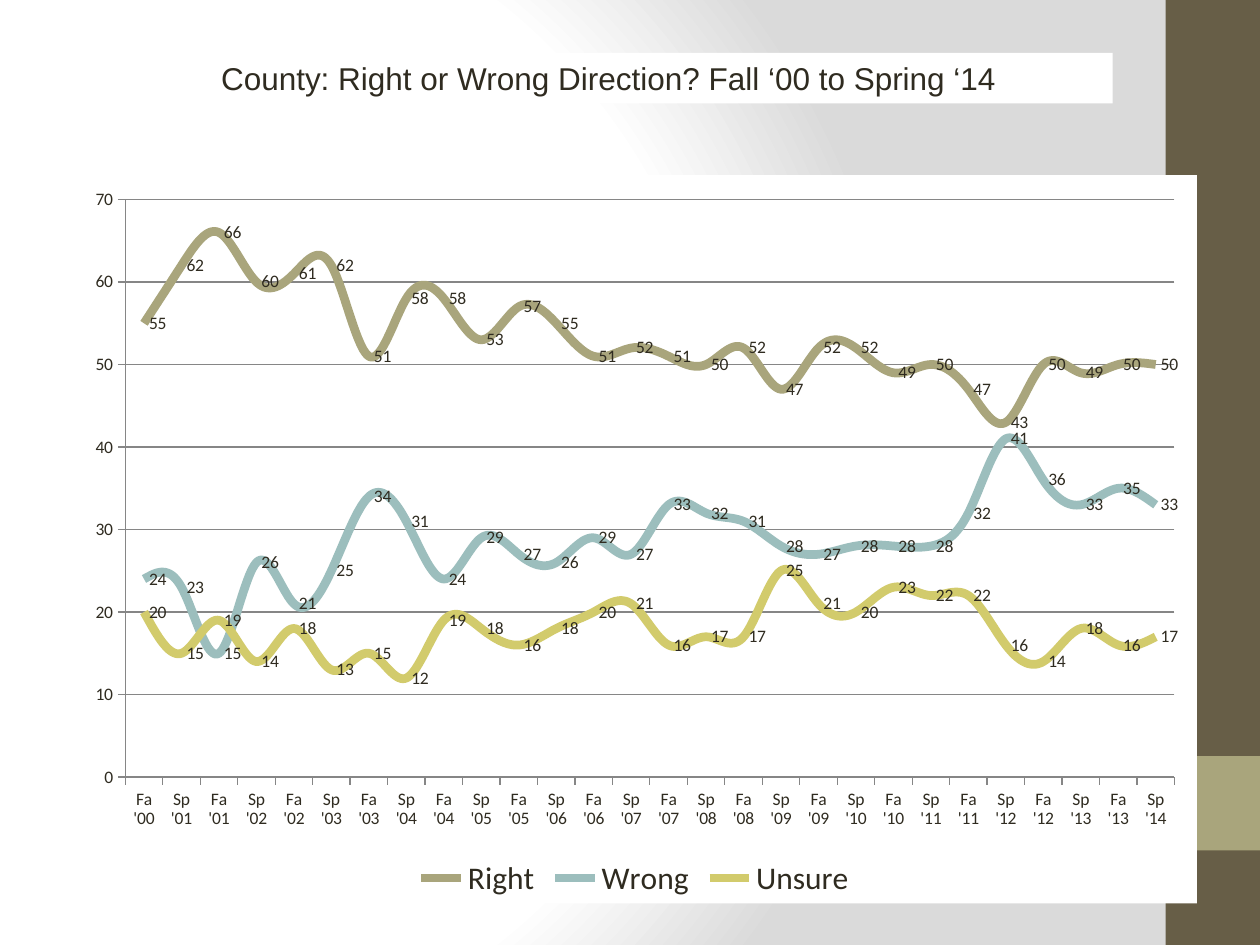
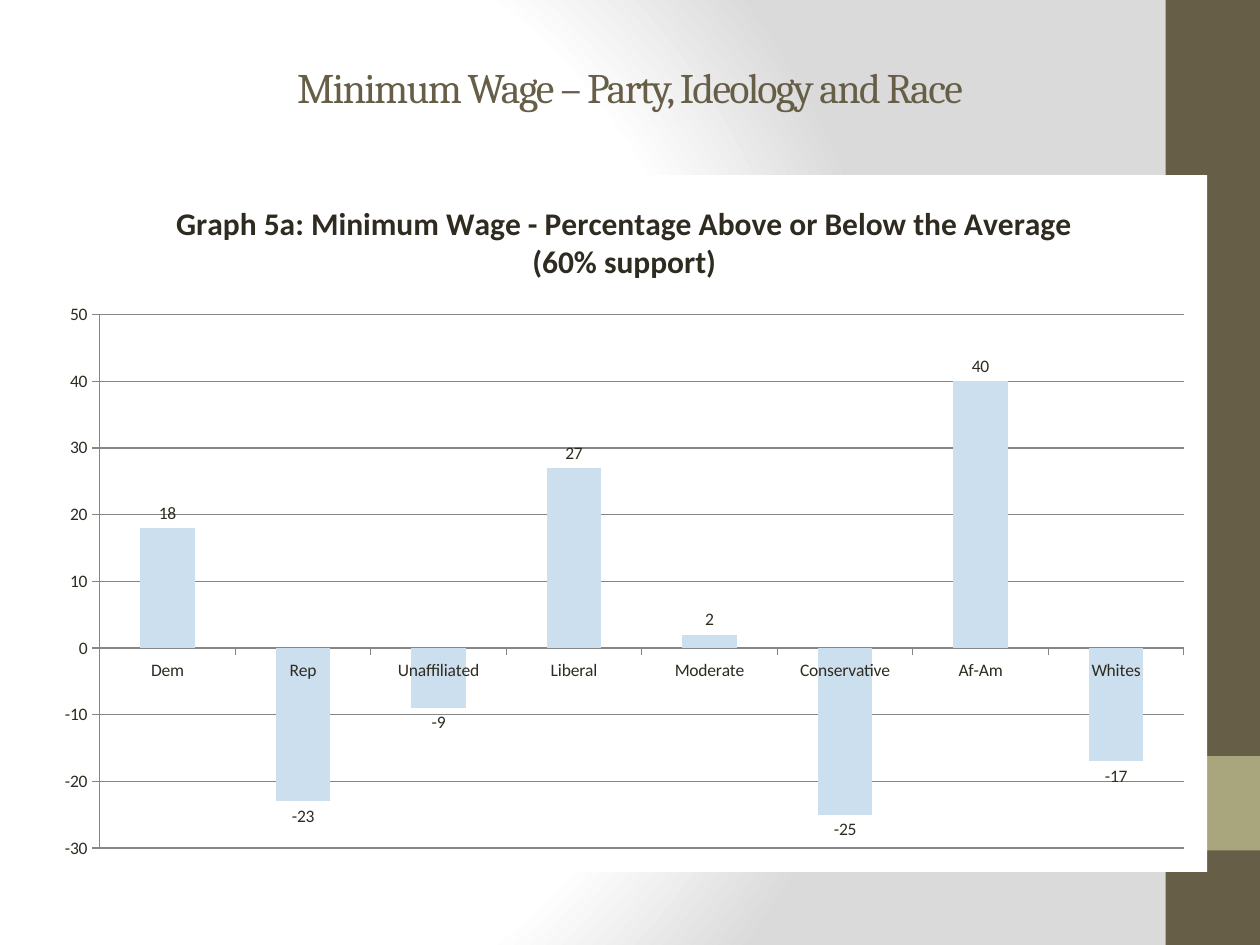
import dataclasses
import typing

import pptx
import pptx.chart.data
import pptx.dml.color
import pptx.enum.chart
import pptx.enum.shapes
import pptx.enum.text
import pptx.oxml
import pptx.oxml.ns
import pptx.util

Inches = pptx.util.Inches
Pt = pptx.util.Pt
qn = pptx.oxml.ns.qn
Kind = pptx.enum.chart.XL_CHART_TYPE
Spot = pptx.enum.chart.XL_LABEL_POSITION
Box = tuple[float, float, float, float]

COLORS = {
    "white": "FFFFFF", "fade": "DADADA", "brown": "675E47", "khaki": "A9A57C",
    "text": "2F2B20", "teal": "9CBEBD", "lime": "D2CB6C", "sky": "CCDFEE",
    "grid": "868686",
}
NS = pptx.oxml.ns.nsdecls("a", "c")


@dataclasses.dataclass
class Band:
    box: Box
    color: str


@dataclasses.dataclass
class Title:
    text: str
    box: Box
    font: str
    size: int
    color: str
    fill: typing.Optional[str] = None
    space: int = 0


@dataclasses.dataclass
class Series:
    name: str
    color: str
    vals: list[int]


@dataclasses.dataclass
class Graph:
    kind: Kind
    box: Box
    cats: list[str]
    series: list[Series]
    low: int
    high: int
    spot: Spot
    title: str = ""


BANDS = [
    Band((9.25, 0, 0.75, 7.5), "brown"),
    Band((9.25, 6, 0.75, 0.75), "khaki"),
]

# Terms run from fall 2000 to spring 2014
TERMS = ["Fa '00"] + [
    f"{term} '{year:02}" for year in range(1, 14) for term in ("Sp", "Fa")
] + ["Sp '14"]

TREND = Graph(
    Kind.LINE, (0.58, 1.39, 8.92, 5.78), TERMS,
    [
        Series("Right", "khaki", [
            55, 62, 66, 60, 61, 62, 51, 58, 58, 53, 57, 55, 51, 52,
            51, 50, 52, 47, 52, 52, 49, 50, 47, 43, 50, 49, 50, 50]),
        Series("Wrong", "teal", [
            24, 23, 15, 26, 21, 25, 34, 31, 24, 29, 27, 26, 29, 27,
            33, 32, 31, 28, 27, 28, 28, 28, 32, 41, 36, 33, 35, 33]),
        Series("Unsure", "lime", [
            20, 15, 19, 14, 18, 13, 15, 12, 19, 18, 16, 18, 20, 21,
            16, 17, 17, 25, 21, 20, 23, 22, 22, 16, 14, 18, 16, 17]),
    ],
    0, 70, Spot.RIGHT,
)

WAGE = Graph(
    Kind.COLUMN_CLUSTERED, (0.33, 1.39, 9.25, 5.53),
    ["Dem", "Rep", "Unaffiliated", "Liberal", "Moderate", "Conservative",
     "Af-Am", "Whites"],
    [Series("Series 1", "sky", [18, -23, -9, 27, 2, -25, 40, -17])],
    -30, 50, Spot.OUTSIDE_END,
    "Graph 5a: Minimum Wage - Percentage Above or Below the Average (60% support)",
)

PAGES = [
    (Title("County: Right or Wrong Direction? Fall ‘00 to Spring ‘14",
           (0.83, 0.42, 8, 0.4), "Arial", 18, "text", fill="white"), TREND),
    (Title("Minimum Wage – Party, Ideology and Race",
           (0.5, 0.37, 9, 0.63), "Cambria", 24, "brown", space=-1), WAGE),
]


def rgb(name: str) -> pptx.dml.color.RGBColor:
    return pptx.dml.color.RGBColor.from_string(COLORS[name])


def paint(fill, name: str) -> None:
    fill.solid()
    fill.fore_color.rgb = rgb(name)


def style(font, face: str, size: int, color: str, bold: bool = False) -> None:
    font.name = face
    font.size = Pt(size)
    font.bold = bold
    font.color.rgb = rgb(color)


def back(master) -> None:
    """Give the master a radial fade from white to grey."""
    master.background.fill.solid()
    solid = master.element.find(".//" + qn("p:bgPr")).find(qn("a:solidFill"))
    stops = "".join(
        f'<a:gs pos="{pos * 1000}"><a:srgbClr val="{COLORS[name]}"/></a:gs>'
        for pos, name in ((0, "white"), (75, "white"), (100, "fade")))
    fade = pptx.oxml.parse_xml(
        f'<a:gradFill {NS} rotWithShape="1"><a:gsLst>{stops}</a:gsLst>'
        '<a:path path="circle"><a:fillToRect l="20000" t="50000" r="100000" '
        'b="50000"/></a:path></a:gradFill>')
    solid.getparent().replace(solid, fade)


def draw_band(slide, band: Band) -> None:
    shape = slide.shapes.add_shape(
        pptx.enum.shapes.MSO_SHAPE.RECTANGLE, *map(Inches, band.box))
    shape.shadow.inherit = False
    paint(shape.fill, band.color)
    shape.line.fill.background()


def draw_title(slide, title: Title) -> None:
    shape = slide.shapes.title
    shape.left, shape.top, shape.width, shape.height = map(Inches, title.box)
    if title.fill:
        paint(shape.fill, title.fill)
    frame = shape.text_frame
    frame.word_wrap = True
    frame.auto_size = pptx.enum.text.MSO_AUTO_SIZE.NONE
    frame.vertical_anchor = pptx.enum.text.MSO_ANCHOR.MIDDLE
    para = frame.paragraphs[0]
    para.alignment = pptx.enum.text.PP_ALIGN.CENTER
    run = para.add_run()
    run.text = title.text
    style(run.font, title.font, title.size, title.color)
    if title.space:
        run.font._element.set("spc", str(title.space * 100))


def draw_axes(chart, graph: Graph) -> None:
    for axis in (chart.category_axis, chart.value_axis):
        axis.major_tick_mark = pptx.enum.chart.XL_TICK_MARK.OUTSIDE
        axis.minor_tick_mark = pptx.enum.chart.XL_TICK_MARK.NONE
        axis.format.line.color.rgb = rgb("grid")
        axis.format.line.width = Pt(0.75)
    axis = chart.value_axis
    axis.minimum_scale, axis.maximum_scale = graph.low, graph.high
    axis.major_unit = 10
    axis.has_major_gridlines = True
    line = axis.major_gridlines.format.line
    line.color.rgb = rgb("grid")
    line.width = Pt(0.75)


def draw_graph(slide, graph: Graph) -> None:
    data = pptx.chart.data.CategoryChartData()
    data.categories = graph.cats
    for item in graph.series:
        data.add_series(item.name, item.vals)
    chart = slide.shapes.add_chart(
        graph.kind, *map(Inches, graph.box), data).chart
    style(chart.font, "Calibri", 10, "text")

    # White chart area
    chart.element.find(qn("c:chart")).addnext(pptx.oxml.parse_xml(
        f'<c:spPr {NS}><a:solidFill><a:srgbClr val="{COLORS["white"]}"/>'
        '</a:solidFill><a:ln><a:noFill/></a:ln></c:spPr>'))

    # Heading and legend
    chart.has_title = bool(graph.title)
    if graph.title:
        run = chart.chart_title.text_frame.paragraphs[0].add_run()
        run.text = graph.title
        style(run.font, "Calibri", 18, "text", bold=True)
        chart.chart_title.include_in_layout = False
    chart.has_legend = len(graph.series) > 1
    if chart.has_legend:
        chart.legend.position = pptx.enum.chart.XL_LEGEND_POSITION.BOTTOM
        chart.legend.include_in_layout = False
        style(chart.legend.font, "Calibri", 18, "text")

    draw_axes(chart, graph)

    # Series and value labels
    plot = chart.plots[0]
    plot.vary_by_categories = False
    plot.has_data_labels = True
    plot.data_labels.show_value = True
    plot.data_labels.position = graph.spot
    style(plot.data_labels.font, "Calibri", 10, "text")
    for series, item in zip(plot.series, graph.series):
        if graph.kind == Kind.LINE:
            series.smooth = True
            series.marker.style = pptx.enum.chart.XL_MARKER_STYLE.NONE
            series.format.line.color.rgb = rgb(item.color)
            series.format.line.width = Pt(5)
        else:
            plot.gap_width = 150
            series.invert_if_negative = False
            paint(series.format.fill, item.color)


def main() -> None:
    deck = pptx.Presentation()
    deck.slide_width, deck.slide_height = Inches(10), Inches(7.5)
    back(deck.slide_master)
    layout = deck.slide_layouts.get_by_name("Title Only")
    for title, graph in PAGES:
        slide = deck.slides.add_slide(layout)
        for band in BANDS:
            draw_band(slide, band)
        draw_title(slide, title)
        draw_graph(slide, graph)
    deck.save("out.pptx")


if __name__ == "__main__":
    main()
